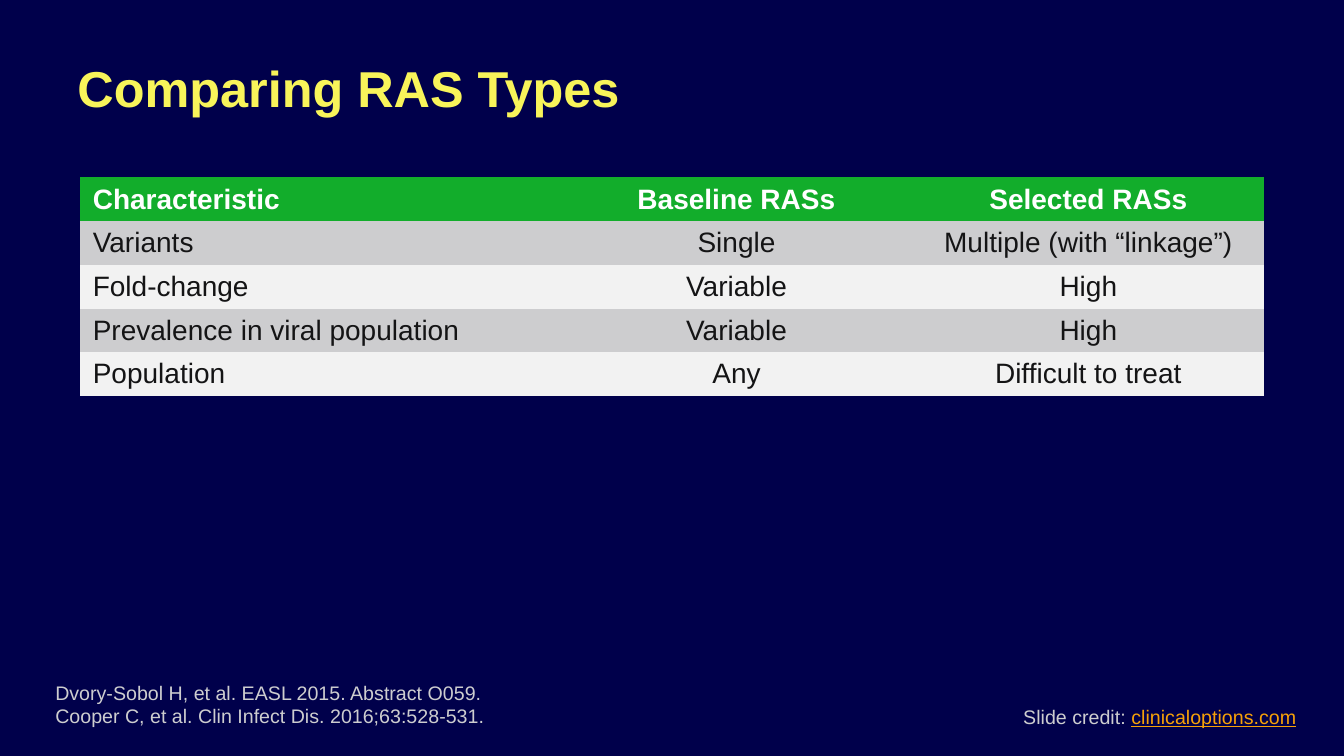
from pptx import Presentation
from pptx.dml.color import RGBColor
from pptx.enum.text import MSO_ANCHOR as Anchor, PP_ALIGN as Align
from pptx.oxml.ns import qn
from pptx.util import Inches, Pt

YELLOW, ORANGE, WHITE = "F8F45A", "F6A108", "FFFFFF"
NAVY, GREEN, INK = "00004B", "12AD2B", "141415"
GRAY, PALE = "CDCDCF", "F2F2F2"


def add_run(paragraph, text, size, color, bold=False, underline=False):
    run = paragraph.add_run()
    run.text = text
    font = run.font
    font.name, font.size = "Arial", Pt(size)
    font.bold, font.underline = bold, underline
    font.color.rgb = RGBColor.from_string(color)


def add_text_frame(left, top, width, height, anchor, wrap=True):
    box = slide.shapes.add_textbox(Inches(left), Inches(top), Inches(width), Inches(height))
    frame = box.text_frame
    frame.word_wrap = wrap
    frame.vertical_anchor = anchor
    return frame


presentation = Presentation()
presentation.slide_width = Inches(13.33)
presentation.slide_height = Inches(7.5)
slide = presentation.slides.add_slide(presentation.slide_layouts[6])
background = slide.background.fill
background.solid()
background.fore_color.rgb = RGBColor.from_string(NAVY)

# Title
title = add_text_frame(0.67, 0.26, 11.89, 1.21, Anchor.MIDDLE)
add_run(title.paragraphs[0], "Comparing RAS Types", 36, YELLOW, bold=True)

# Slide credit
credit = add_text_frame(10.05, 6.94, 2.92, 0.34, Anchor.TOP, wrap=False).paragraphs[0]
add_run(credit, "Slide credit: ", 14, GRAY)
add_run(credit, "clinicaloptions.com", 14, ORANGE, underline=True)

# References
references = add_text_frame(0.45, 6.7, 8.76, 0.57, Anchor.BOTTOM)
add_run(references.paragraphs[0], "Dvory-Sobol H, et al. EASL 2015. Abstract O059.", 14, GRAY)
add_run(references.add_paragraph(), "Cooper C, et al. Clin Infect Dis. 2016;63:528-531.", 14, GRAY)

# Comparison table
rows = [
    ("Characteristic", "Baseline RASs", "Selected RASs"),
    ("Variants", "Single", "Multiple (with “linkage”)"),
    ("Fold-change", "Variable", "High"),
    ("Prevalence in viral population", "Variable", "High"),
    ("Population", "Any", "Difficult to treat"),
]
table_shape = slide.shapes.add_table(
    len(rows), 3, Inches(0.79), Inches(1.76), Inches(11.76), Inches(2.17))
table = table_shape.table
for column, width in zip(table.columns, (4.77, 3.49, 3.49)):
    column.width = Inches(width)

# Table style without grid lines
for style in table_shape.element.iter(qn("a:tableStyleId")):
    style.text = "{2D5ABB26-0587-4C30-8999-92F81FD0307C}"

for row_index, row in enumerate(rows):
    header = row_index == 0
    fill = GREEN if header else (PALE, GRAY)[row_index % 2]
    for column_index, text in enumerate(row):
        cell = table.cell(row_index, column_index)
        cell.fill.solid()
        cell.fill.fore_color.rgb = RGBColor.from_string(fill)
        cell.vertical_anchor = Anchor.MIDDLE
        cell.margin_left = cell.margin_right = Inches(0.13)
        cell.margin_top = cell.margin_bottom = Inches(0.05)
        paragraph = cell.text_frame.paragraphs[0]
        paragraph.alignment = Align.CENTER if column_index else Align.LEFT
        add_run(paragraph, text, 20, WHITE if header else INK, bold=header)

presentation.save("out.pptx")
